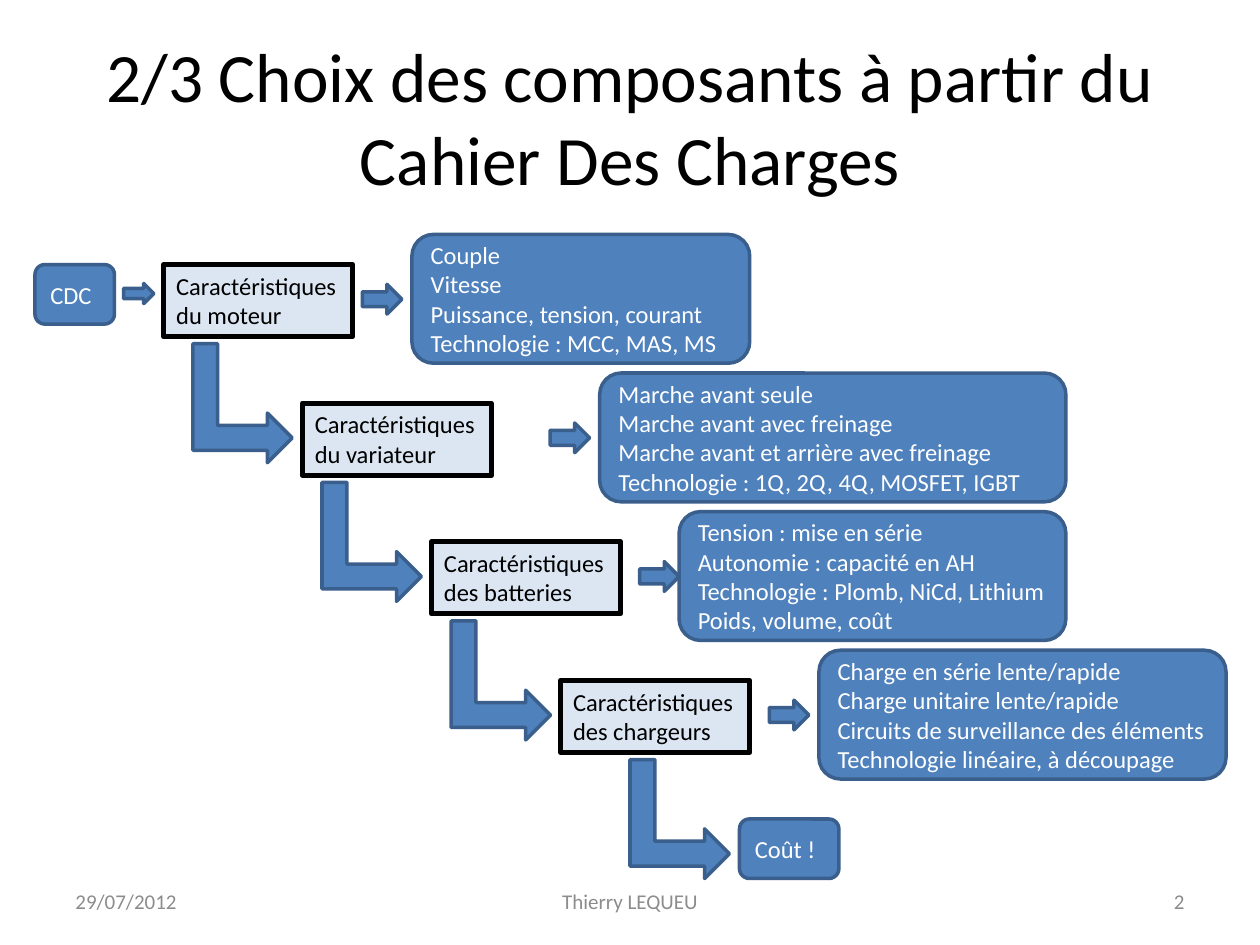
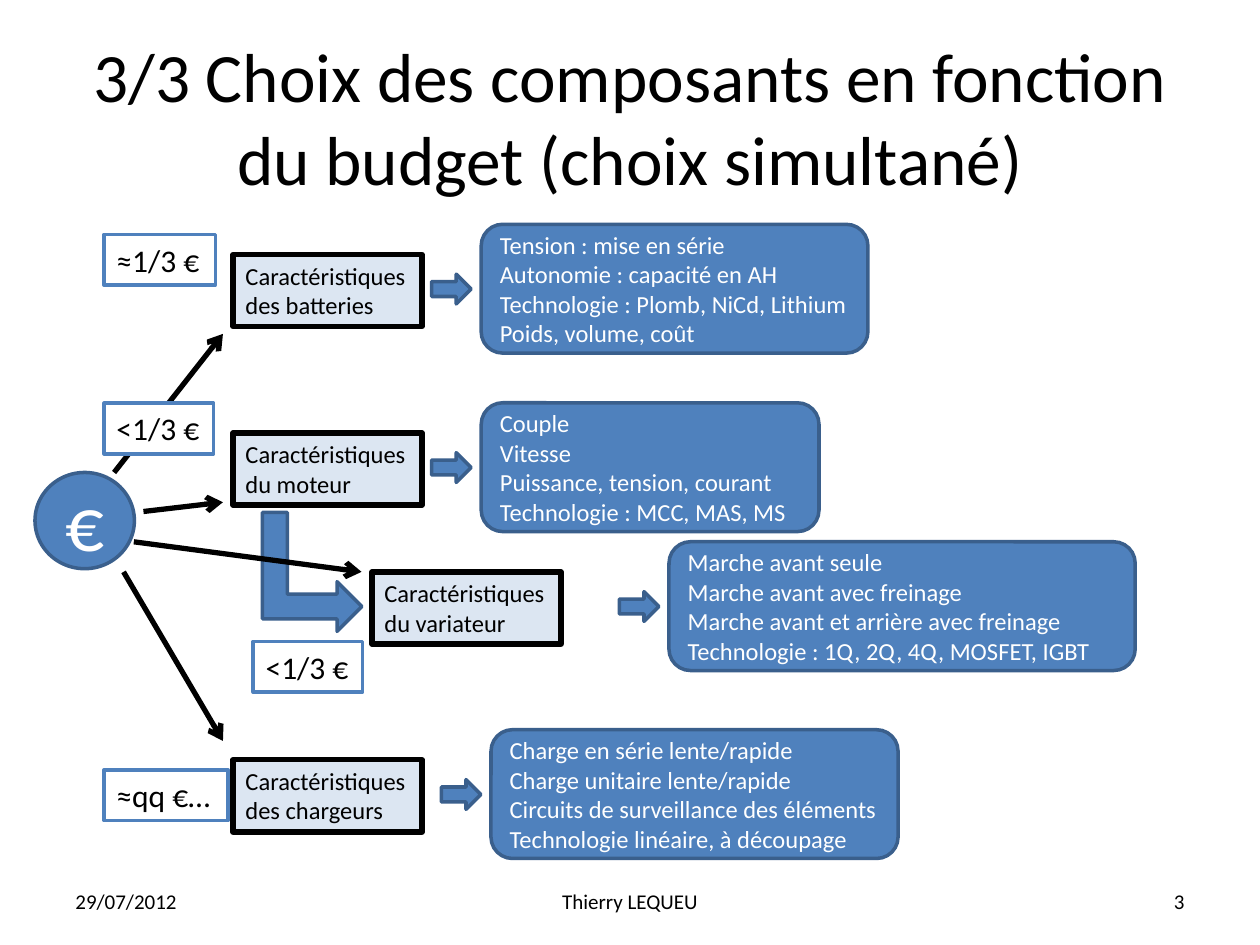
"""Build two slides on choosing the components of an electric drive."""
from dataclasses import dataclass

from lxml import etree
from pptx import Presentation
from pptx import slide as sl
from pptx import util as u
from pptx.dml import color
from pptx.enum import shapes, text
from pptx.oxml import ns

KIND = shapes.MSO_SHAPE
ALIGN = text.PP_ALIGN
ANCHOR = text.MSO_ANCHOR
FIT = text.MSO_AUTO_SIZE


@dataclass(frozen=True)
class Theme:
    """Hold the colours, type sizes and line widths."""
    font: str = "Calibri"
    black: str = "000000"
    white: str = "FFFFFF"
    grey: str = "8C8C8C"
    blue: str = "4F81BD"
    edge: str = "3A5F8C"
    pale: str = "DCE6F2"
    title: float = 39.6
    euro: float = 44
    price: float = 18
    body: float = 14
    foot: float = 12
    thick: float = 3
    thin: float = 2


@dataclass(frozen=True)
class Item:
    """Describe a component, its details and the width they need."""
    name: str
    lines: str
    width: float


@dataclass(frozen=True)
class Step:
    """Place a component box and the left edge of its details."""
    item: Item
    left: float
    top: float
    side: float
    gap: float = 28.4


@dataclass(frozen=True)
class Tag:
    """Place a price label."""
    label: str
    left: float
    top: float
    width: float = 62.6


@dataclass(frozen=True)
class Ray:
    """Give the ends of a thin arrow."""
    x1: float
    y1: float
    x2: float
    y2: float


T = Theme()
DATE, AUTHOR = "29/07/2012", "Thierry LEQUEU"

MOTOR = Item("Caractéristiques du moteur",
             "Couple\nVitesse\nPuissance, tension, courant\n"
             "Technologie : MCC, MAS, MS", 193)
DRIVE = Item("Caractéristiques du variateur",
             "Marche avant seule\nMarche avant avec freinage\n"
             "Marche avant et arrière avec freinage\n"
             "Technologie : 1Q, 2Q, 4Q, MOSFET, IGBT", 266.4)
CELLS = Item("Caractéristiques des batteries",
             "Tension : mise en série\nAutonomie : capacité en AH\n"
             "Technologie : Plomb, NiCd, Lithium\nPoids, volume, coût", 221)
LOADER = Item("Caractéristiques des chargeurs",
              "Charge en série lente/rapide\nCharge unitaire lente/rapide\n"
              "Circuits de surveillance des éléments\n"
              "Technologie linéaire, à découpage", 232.6)

TOP, PITCH = 151.2, 79.2
CHAIN = [
    Step(MOTOR, 93.6, TOP, 235.4),
    Step(DRIVE, 172.8, TOP + PITCH, 342.7),
    Step(CELLS, 246.6, TOP + 2 * PITCH, 388.1, gap=22.6),
    Step(LOADER, 320.4, TOP + 3 * PITCH, 468),
]
COST = (422.6, TOP + 4 * PITCH)

BUDGET = [
    Step(MOTOR, 133.2, 247.4, 275),
    Step(DRIVE, 212.6, 326.8, 382.3),
    Step(CELLS, 133.2, 145.4, 275),
    Step(LOADER, 133.2, 434.2, 280.6),
]
RAYS = [
    Ray(82, 292.3, 127.4, 287),
    Ray(65.2, 270, 127.4, 190.8),
    Ray(70.6, 326.8, 127.4, 423.4),
    Ray(76.5, 309.6, 206.6, 326.8),
]
TAGS = [
    Tag("≈1/3 €", 59.5, 133.9, 63.6),
    Tag("<1/3 €", 59.5, 230.4),
    Tag("<1/3 €", 144.7, 366.5),
    Tag("≈qq €…", 59.5, 439.9, 70.8),
]


def rgb(code: str) -> color.RGBColor:
    """Turn a hex code into a colour."""
    return color.RGBColor.from_string(code)


def write(shape, words: str, *, size: float, ink: str = T.black,
          align=ALIGN.LEFT, anchor=ANCHOR.MIDDLE, wrap: bool = True,
          fit=FIT.NONE) -> None:
    """Fill a shape with formatted text, one paragraph a line."""
    frame = shape.text_frame
    frame.text = words
    frame.word_wrap = wrap
    frame.auto_size = fit
    frame.vertical_anchor = anchor
    for para in frame.paragraphs:
        para.alignment = align
        for run in para.runs:
            run.font.name = T.font
            run.font.size = u.Pt(size)
            run.font.color.rgb = rgb(ink)


def draw(page: sl.Slide, kind, left: float, top: float, width: float,
         height: float, fill: str = T.blue, edge: str = T.edge,
         line: float = T.thin):
    """Add a flat preset shape."""
    shape = page.shapes.add_shape(
        kind, u.Pt(left), u.Pt(top), u.Pt(width), u.Pt(height))
    shape.shadow.inherit = False
    shape.fill.solid()
    shape.fill.fore_color.rgb = rgb(fill)
    shape.line.color.rgb = rgb(edge)
    shape.line.width = u.Pt(line)
    return shape


def pill(page: sl.Slide, words: str, left: float, top: float,
         width: float, height: float) -> None:
    """Add a blue rounded box with white text."""
    box = draw(page, KIND.ROUNDED_RECTANGLE, left, top, width, height)
    write(box, words, size=T.body, ink=T.white)


def stage(page: sl.Slide, step: Step) -> None:
    """Add a component box, its arrow and its details."""
    box = draw(page, KIND.RECTANGLE, step.left, step.top, 108, 41.2,
               T.pale, T.black, T.thick)
    write(box, step.item.name, size=T.body, anchor=ANCHOR.TOP,
          fit=FIT.SHAPE_TO_FIT_TEXT)
    pill(page, step.item.lines, step.side, step.top - 17.2,
         step.item.width, 73.6)
    draw(page, KIND.RIGHT_ARROW, step.side - step.gap, step.top + 11.3,
         22.6, 17)


def elbow(page: sl.Slide, left: float, top: float) -> None:
    """Add the bent arrow that leads to the box at this corner."""
    bend = draw(page, KIND.BENT_UP_ARROW, left - 68.2, top - 28.4, 68, 56.8)
    bend.rotation = 90


def beam(page: sl.Slide, ray: Ray) -> None:
    """Add a black line with an open arrowhead."""
    link = page.shapes.add_connector(
        shapes.MSO_CONNECTOR.STRAIGHT,
        *map(u.Pt, (ray.x1, ray.y1, ray.x2, ray.y2)))
    link.line.color.rgb = rgb(T.black)
    link.line.width = u.Pt(T.thick)
    props = link._element.spPr
    etree.SubElement(props.find(ns.qn("a:ln")), ns.qn("a:tailEnd"),
                     type="arrow")
    etree.SubElement(props, ns.qn("a:effectLst"))


def price(page: sl.Slide, tag: Tag) -> None:
    """Add a white price label."""
    box = draw(page, KIND.RECTANGLE, tag.left, tag.top, tag.width, 29,
               T.white, T.blue)
    write(box, tag.label, size=T.price, anchor=ANCHOR.TOP, wrap=False,
          fit=FIT.SHAPE_TO_FIT_TEXT)


def start(deck, title: str, number: int, ink: str) -> sl.Slide:
    """Add a slide with its title and footers."""
    page = deck.slides.add_slide(deck.slide_layouts[5])
    head = page.shapes.title
    head.left, head.top = u.Pt(36), u.Pt(21.6)
    head.width, head.height = u.Pt(648), u.Pt(90)
    write(head, title, size=T.title, align=ALIGN.CENTER)
    for words, left, width, align in (
            (DATE, 36, 168, ALIGN.LEFT),
            (AUTHOR, 246, 228, ALIGN.CENTER),
            (str(number), 516, 168, ALIGN.RIGHT)):
        foot = page.shapes.add_textbox(
            u.Pt(left), u.Pt(500.5), u.Pt(width), u.Pt(28.8))
        write(foot, words, size=T.foot, ink=ink, align=align)
    return page


def chain(deck) -> None:
    """Build the slide that goes from requirements to cost."""
    page = start(deck, "2/3 Choix des composants à partir du "
                 "Cahier Des Charges", 2, T.grey)
    pill(page, "CDC", 20, TOP, 45.4, 34)
    draw(page, KIND.RIGHT_ARROW, 70.6, 162, 17.3, 11.5)
    for step in CHAIN:
        stage(page, step)
    for left, top in [(s.left, s.top) for s in CHAIN[1:]] + [COST]:
        elbow(page, left, top)
    pill(page, "Coût !", *COST, 56.8, 34)


def budget(deck) -> None:
    """Build the slide that shares out the budget."""
    page = start(deck, "3/3 Choix des composants en fonction du budget "
                 "(choix simultané)", 3, T.black)
    for step in BUDGET:
        stage(page, step)
    elbow(page, BUDGET[1].left, BUDGET[1].top)
    coin = draw(page, KIND.OVAL, 20, 270, 56.8, 55)
    write(coin, "€", size=T.euro, ink=T.white, align=ALIGN.CENTER)
    for ray in RAYS:
        beam(page, ray)
    for tag in TAGS:
        price(page, tag)


def main() -> None:
    """Build and save the deck."""
    deck = Presentation()
    deck.slide_width, deck.slide_height = u.Pt(720), u.Pt(540)
    chain(deck)
    budget(deck)
    deck.save("out.pptx")


if __name__ == "__main__":
    main()
